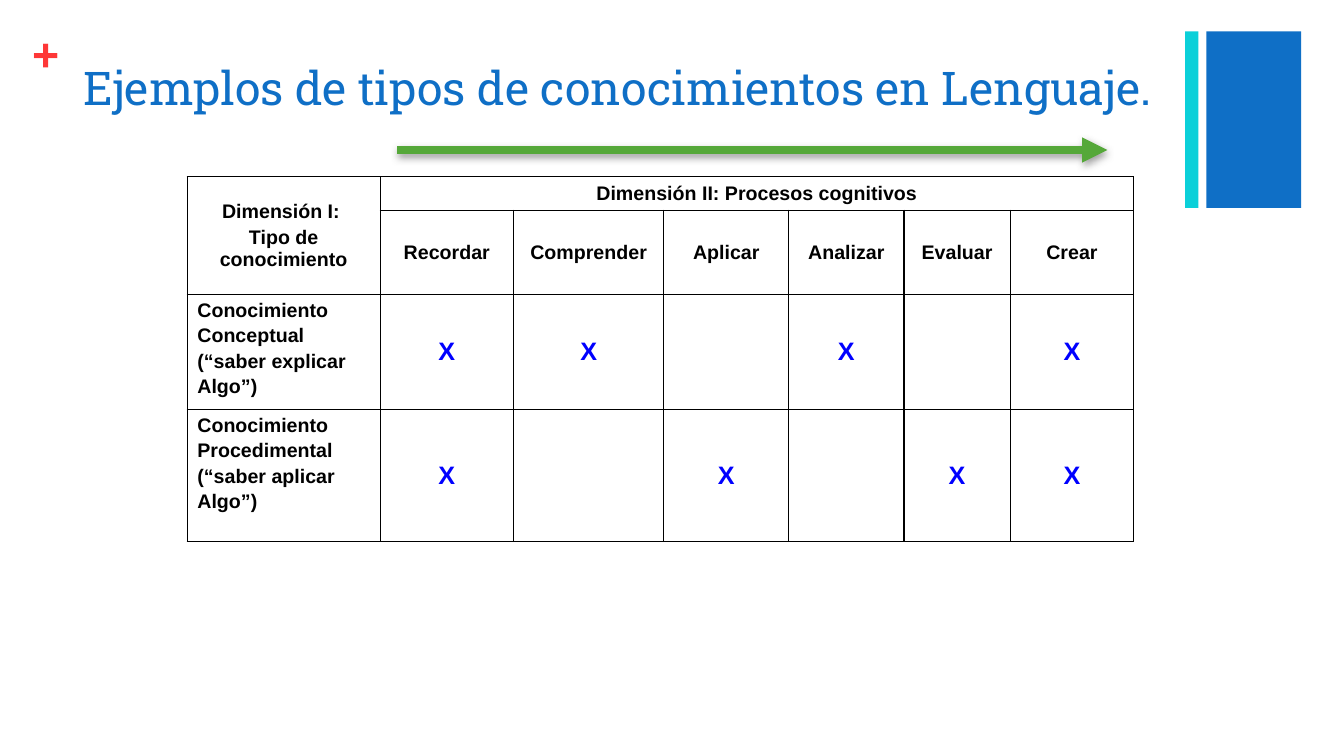
from dataclasses import dataclass

import pptx
import pptx.dml.color
import pptx.enum.shapes
import pptx.enum.text
import pptx.oxml
import pptx.oxml.ns
import pptx.util

Cm, Pt = pptx.util.Cm, pptx.util.Pt
RGB = pptx.dml.color.RGBColor.from_string
ALIGN = pptx.enum.text.PP_ALIGN
ANCHOR = pptx.enum.text.MSO_ANCHOR
NS = pptx.oxml.ns.nsdecls("a")


@dataclass(frozen=True)
class Theme:
    blue: str = "0F6FC6"
    cyan: str = "0BD0D9"
    red: str = "FE3737"
    green: str = "55A839"
    mark: str = "0000FF"
    black: str = "000000"
    white: str = "FFFFFF"
    shadow: str = "808080"
    heading: str = "Roboto Slab"
    body: str = "Arial"
    title_size: float = 33.2
    cell_size: float = 14
    mark_size: float = 18


T = Theme()
CELL_FONT = dict(name=T.body, size=Pt(T.cell_size), bold=True)
PROCESSES = ["Recordar", "Comprender", "Aplicar", "Analizar", "Evaluar", "Crear"]
KNOWLEDGE = [
    (["Conocimiento", "Conceptual", "(“saber explicar", "Algo”)"],
     {"Recordar", "Comprender", "Analizar", "Crear"}),
    (["Conocimiento", "Procedimental", "(“saber aplicar", "Algo”)"],
     {"Recordar", "Aplicar", "Evaluar", "Crear"}),
]
COLUMN_WIDTHS = [4.86, 3.36, 3.79, 3.15, 2.9, 2.68, 3.11]
ROW_HEIGHTS = [0.82, 2.02, 2.77, 3.33]


def apply(obj, formats):
    for name, value in formats.items():
        setattr(obj, name, value)


def style_font(p, color, formats):
    apply(p.font, formats)
    p.font.color.rgb = RGB(color)


def place(sp, box):
    apply(sp, dict(zip(("left", "top", "width", "height"), map(Cm, box))))


def add_title(s, box, text):
    sp = s.shapes.title
    place(sp, box)
    tf = sp.text_frame
    tf.text = text
    apply(tf, dict(word_wrap=True, vertical_anchor=ANCHOR.TOP,
                   auto_size=pptx.enum.text.MSO_AUTO_SIZE.NONE))
    p = tf.paragraphs[0]
    p.alignment = ALIGN.LEFT
    style_font(p, T.blue, dict(name=T.heading, size=Pt(T.title_size)))


def add_plus(s, box):
    tf = s.shapes.add_textbox(*map(Cm, box)).text_frame
    apply(tf, dict.fromkeys(
        ("margin_left", "margin_top", "margin_right", "margin_bottom"), 0))
    tf.text = "+"
    style_font(tf.paragraphs[0], T.red,
               dict(name=T.body, size=Pt(T.title_size), bold=True))


def add_corner_bars(s, box):
    """Thin bar at the left edge of the box, wide bar at its right edge."""
    x, y, w, h = box
    thin, wide = 0.33, 2.39
    for left, width, color in ((x, thin, T.cyan), (x + w - wide, wide, T.blue)):
        sp = s.shapes.add_shape(pptx.enum.shapes.MSO_SHAPE.RECTANGLE,
                                *map(Cm, (left, y, width, h)))
        sp.shadow.inherit = False
        sp.fill.solid()
        sp.fill.fore_color.rgb = RGB(color)
        sp.line.fill.background()


def add_arrow(s, box):
    x, y, w, h = box
    line = s.shapes.add_connector(pptx.enum.shapes.MSO_CONNECTOR.STRAIGHT,
                                  *map(Cm, (x, y, x + w, y + h)))
    line.line.color.rgb = RGB(T.green)
    line.line.width = Pt(6)
    line.line._get_or_add_ln().append(
        pptx.oxml.parse_xml(f'<a:tailEnd {NS} type="triangle"/>'))
    line._element.spPr.append(pptx.oxml.parse_xml(
        f'<a:effectLst {NS}><a:outerShdw blurRad="{Pt(5)}" dist="{Pt(2)}" '
        f'dir="5400000" rotWithShape="0"><a:srgbClr val="{T.shadow}">'
        '<a:alpha val="75000"/></a:srgbClr></a:outerShdw></a:effectLst>'))


def frame_cell(cell):
    """Black border on every side, white fill."""
    tcPr = cell._tc.get_or_add_tcPr()
    for side in "LRTB":
        tcPr.append(pptx.oxml.parse_xml(
            f'<a:ln{side} {NS} w="{Pt(1)}"><a:solidFill>'
            f'<a:srgbClr val="{T.black}"/></a:solidFill></a:ln{side}>'))
    cell.fill.solid()
    cell.fill.fore_color.rgb = RGB(T.white)
    cell.vertical_anchor = ANCHOR.MIDDLE


def write_cell(cell, lines, color=T.black, align=ALIGN.CENTER, **formats):
    tf = cell.text_frame
    tf.text = "\n".join(lines)
    for i, p in enumerate(tf.paragraphs):
        p.alignment = align
        if i:
            p.space_before = Pt(2.5)
        if align == ALIGN.LEFT:
            pPr = p._p.get_or_add_pPr()
            pPr.set("marL", str(Cm(0.79)))
            pPr.set("indent", str(-Cm(0.79)))
        style_font(p, color, CELL_FONT | formats)


def add_matrix(s, box):
    table = s.shapes.add_table(len(ROW_HEIGHTS), len(COLUMN_WIDTHS),
                               *map(Cm, box)).table
    apply(table, dict(first_row=False, horz_banding=False))
    for column, width in zip(table.columns, COLUMN_WIDTHS):
        column.width = Cm(width)
    for row, height in zip(table.rows, ROW_HEIGHTS):
        row.height = Cm(height)
    for cell in table.iter_cells():
        frame_cell(cell)

    table.cell(0, 0).merge(table.cell(1, 0))
    table.cell(0, 1).merge(table.cell(0, len(PROCESSES)))
    write_cell(table.cell(0, 0), ["Dimensión I: ", "Tipo de conocimiento"])
    write_cell(table.cell(0, 1), ["Dimensión II: Procesos cognitivos"])
    for c, process in enumerate(PROCESSES, 1):
        write_cell(table.cell(1, c), [process])
    for r, (lines, marked) in enumerate(KNOWLEDGE, 2):
        write_cell(table.cell(r, 0), lines, align=ALIGN.LEFT)
        table.cell(r, 0).vertical_anchor = ANCHOR.TOP
        for c, process in enumerate(PROCESSES, 1):
            if process in marked:
                write_cell(table.cell(r, c), ["X"], T.mark, size=Pt(T.mark_size))


def main():
    prs = pptx.Presentation()
    prs.slide_width, prs.slide_height = Cm(33.87), Cm(19.05)
    s = prs.slides.add_slide(prs.slide_layouts[5])
    add_corner_bars(s, (29.87, 0.79, 2.92, 4.45))
    add_plus(s, (0.81, 0.64, 0.97, 1.42))
    add_title(s, (1.85, 1.35, 27.99, 3.1),
              "Ejemplos de tipos de conocimientos en Lenguaje.")
    add_matrix(s, (4.72, 4.45, sum(COLUMN_WIDTHS), sum(ROW_HEIGHTS)))
    add_arrow(s, (10.01, 3.78, 17.9, 0))
    prs.save("out.pptx")


if __name__ == "__main__":
    main()
